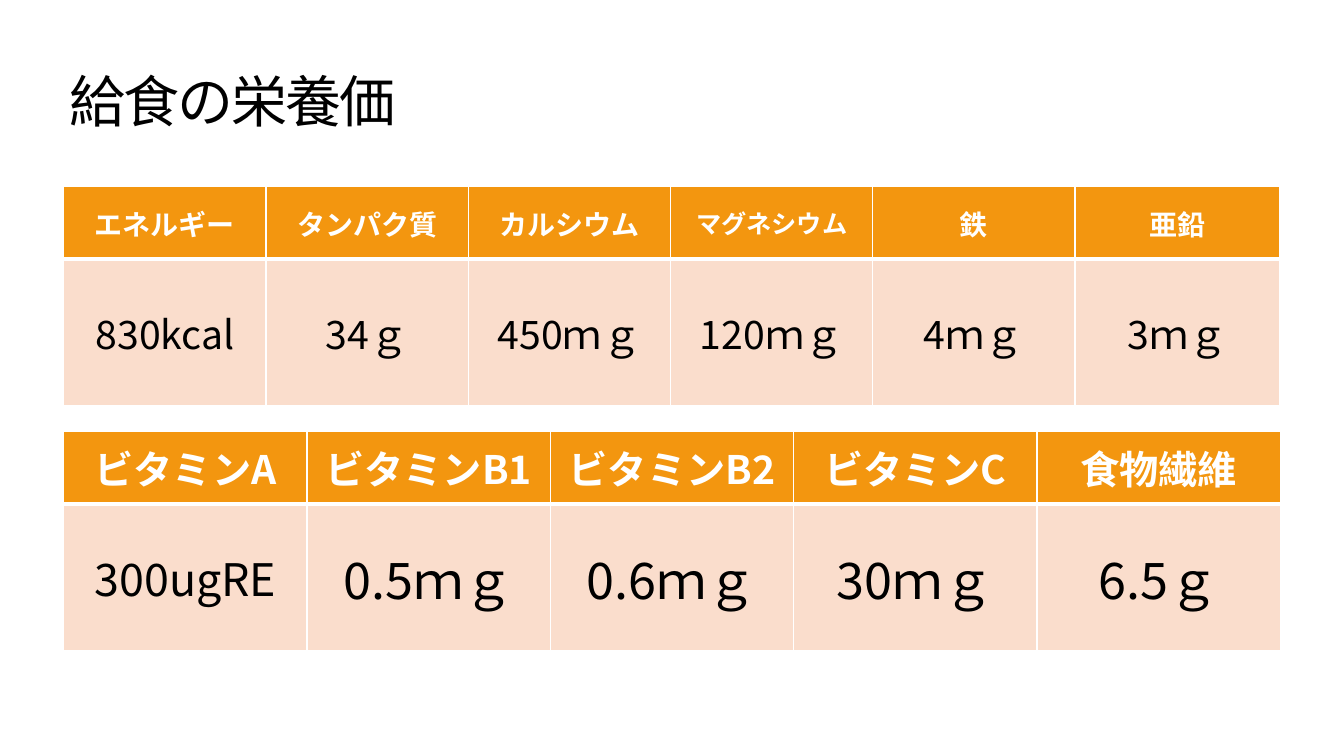
import pptx
import pptx.util
import pptx.dml.color
import pptx.enum.text
import pptx.oxml
import pptx.oxml.ns

FONT = "Noto Sans CJK JP"
WHITE, BLACK, ORANGE, PEACH = "FFFFFF", "000000", "F3960F", "FADDCC"
LEFT = 4.75
ROWS = (9.6, 19.33)
UPPER, LOWER = 24.67, 57.07


def color(code):
    """Turn a hex string into a colour."""
    return pptx.dml.color.RGBColor.from_string(code)


class Sheet:
    """Draws on one page, with lengths in percent of its size."""

    def __init__(self, deck):
        """Add a title-only page to the deck."""
        self.deck = deck
        self.page = deck.slides.add_slide(deck.slide_layouts[5])

    def across(self, share):
        """Convert a share of the width."""
        return round(self.deck.slide_width * share / 100)

    def down(self, share):
        """Convert a share of the height."""
        return round(self.deck.slide_height * share / 100)

    def label(self, frame, text, size, ink, bold=False):
        """Put one centred, formatted paragraph into a text frame."""
        frame.text = text
        para = frame.paragraphs[0]
        para.alignment = pptx.enum.text.PP_ALIGN.CENTER
        span = para.runs[0]
        span.font.name = FONT
        span.font.size = pptx.util.Pt(size)
        span.font.bold = bold
        span.font.color.rgb = color(ink)
        east = pptx.oxml.parse_xml(
            f'<a:ea {pptx.oxml.ns.nsdecls("a")} typeface="{FONT}"/>')
        span.font._element.find(pptx.oxml.ns.qn("a:latin")).addnext(east)
        return para

    def title(self, text, left, top, width, height):
        """Fill and place the title."""
        box = self.page.shapes.title
        box.left, box.width = self.across(left), self.across(width)
        box.top, box.height = self.down(top), self.down(height)
        frame = box.text_frame
        frame.auto_size = pptx.enum.text.MSO_AUTO_SIZE.NONE
        frame.vertical_anchor = pptx.enum.text.MSO_ANCHOR.MIDDLE
        frame.margin_left = frame.margin_right = pptx.util.Inches(0.25)
        frame.margin_top = frame.margin_bottom = pptx.util.Inches(0.25)
        para = self.label(frame, text, 40, BLACK)
        para.line_spacing = 0.85
        para.runs[0].font._element.set("spc", "-150")

    def border(self, cell, **widths):
        """Draw white cell borders with widths in points."""
        properties = cell._tc.get_or_add_tcPr()
        for index, side in enumerate("LRTB"):
            line = pptx.oxml.parse_xml(
                f'<a:ln{side} {pptx.oxml.ns.nsdecls("a")} '
                f'w="{pptx.util.Pt(widths.get(side, 1))}">'
                f'<a:solidFill><a:srgbClr val="{WHITE}"/></a:solidFill>'
                f'</a:ln{side}>')
            properties.insert(index, line)

    def table(self, left, top, column, entries):
        """Add a table from (name, name size, value, value size) entries."""
        grid = self.page.shapes.add_table(
            2, len(entries), self.across(left), self.down(top),
            self.across(column * len(entries)), self.down(sum(ROWS))).table
        for row, height in zip(grid.rows, ROWS):
            row.height = self.down(height)
        for index, (name, name_size, value, value_size) in enumerate(entries):
            grid.columns[index].width = self.across(column)
            head, body = grid.cell(0, index), grid.cell(1, index)
            self.label(head.text_frame, name, name_size, WHITE, True)
            self.label(body.text_frame, value, value_size, BLACK)
            for cell, fill in ((head, ORANGE), (body, PEACH)):
                cell.vertical_anchor = pptx.enum.text.MSO_ANCHOR.MIDDLE
                cell.fill.solid()
                cell.fill.fore_color.rgb = color(fill)
            self.border(head, B=3)
            self.border(body, T=3)


def main():
    """Build and save the nutrition page."""
    deck = pptx.Presentation()
    deck.slide_width = pptx.util.Inches(13.33)
    deck.slide_height = pptx.util.Inches(7.5)
    sheet = Sheet(deck)
    sheet.title("給食の栄養価", 2.93, 3.2, 28.73, 21.47)
    sheet.table(LEFT, UPPER, 15.05, [
        ("エネルギー", 20, "830kcal", 28),
        ("タンパク質", 20, "34ｇ", 28),
        ("カルシウム", 20, "450ｍｇ", 28),
        ("マグネシウム", 18, "120ｍｇ", 28),
        ("鉄", 20, "4ｍｇ", 28),
    ])
    sheet.table(LEFT, LOWER, 18.1, [
        ("ビタミンA", 28, "300ugRE", 32),
        ("ビタミンB1", 28, "0.5ｍｇ", 36),
        ("ビタミンB2", 28, "0.6ｍｇ", 36),
        ("ビタミンC", 28, "30ｍｇ", 36),
    ])
    sheet.table(LEFT + 5 * 15.05, UPPER, 15.2, [("亜鉛", 20, "3ｍｇ", 28)])
    sheet.table(LEFT + 4 * 18.1, LOWER, 18.1, [("食物繊維", 28, "6.5ｇ", 36)])
    deck.save("out.pptx")


if __name__ == "__main__":
    main()
